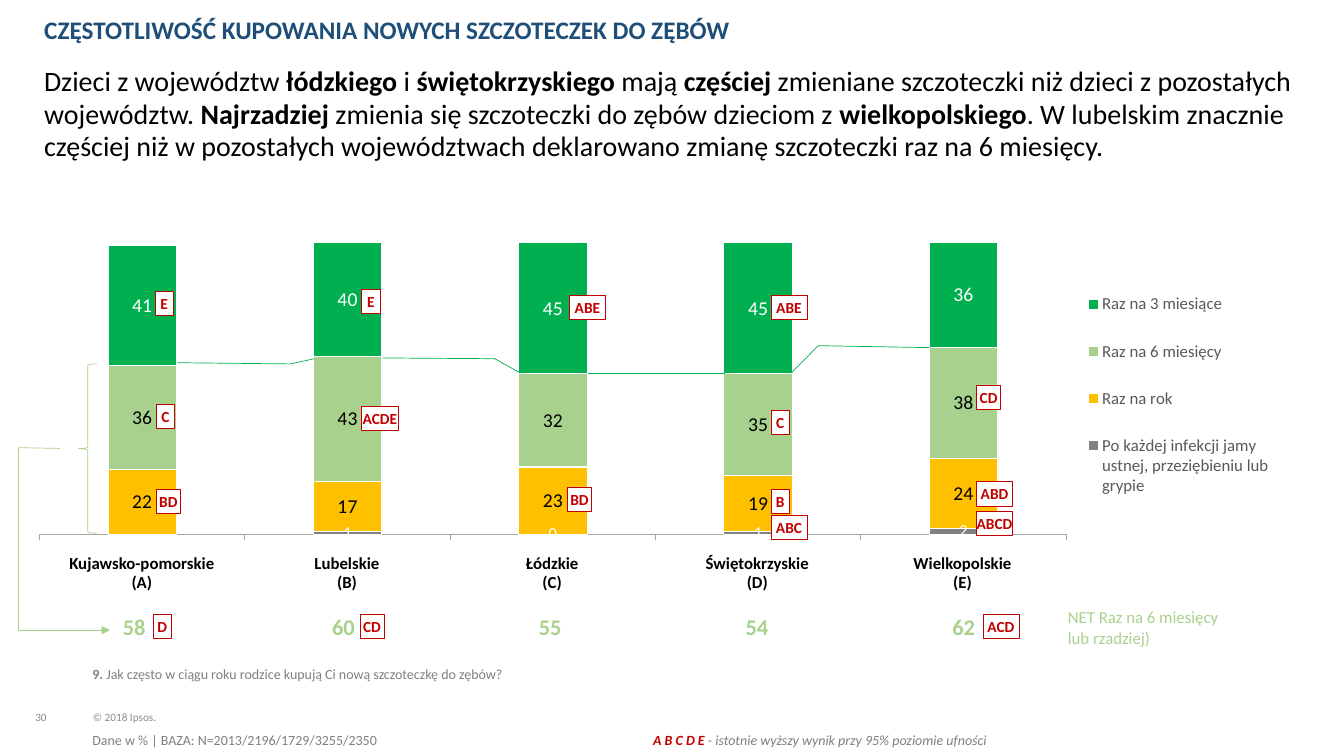
from pptx import Presentation
from pptx import util as u
from pptx.chart import data
from pptx.dml import color as dml
from pptx.enum import chart as ch, shapes, text
from pptx.oxml import parse_xml

NS = 'xmlns:c="http://schemas.openxmlformats.org/drawingml/2006/chart"'
NA = 'xmlns:a="http://schemas.openxmlformats.org/drawingml/2006/main"'
RED, LIGHT, GREEN, GREY = "C00000", "A9D18E", "00B050", "808080"
Cm, Pt = u.Cm, u.Pt


def rgb(code):
    return dml.RGBColor.from_string(code)


def write(para, words, size=10, color="000000", bold=False, italic=False):
    run = para.add_run()
    run.text = words
    font = run.font
    font.name, font.size = "Calibri", Pt(size)
    font.bold, font.italic = bold, italic
    font.color.rgb = rgb(color)


deck = Presentation()
deck.slide_width, deck.slide_height = Cm(33.87), Cm(19.05)
slide = deck.slides.add_slide(deck.slide_layouts[5])
items = slide.shapes

title = items.title
title.left, title.top, title.width, title.height = Cm(0.86), Cm(0.33), Cm(24.84), Cm(0.81)
frame = title.text_frame
frame.auto_size = text.MSO_AUTO_SIZE.NONE
frame.vertical_anchor = text.MSO_ANCHOR.TOP
para = frame.paragraphs[0]
para.alignment, para.line_spacing = text.PP_ALIGN.LEFT, 0.9
write(para, "CZĘSTOTLIWOŚĆ KUPOWANIA NOWYCH SZCZOTECZEK DO ZĘBÓW", size=18, color="1F4E79", bold=True)

series = [
    ("Po każdej infekcji jamy ustnej, przeziębieniu lub grypie", (0, 1, 0, 1, 2), GREY, "FFFFFF", 12),
    ("Raz na rok", (22, 17, 23, 19, 24), "FFC000", "000000", 14),
    ("Raz na 6 miesięcy", (36, 43, 32, 35, 38), LIGHT, "000000", 14),
    ("Raz na 3 miesiące", (41, 40, 45, 45, 36), GREEN, "FFFFFF", 14),
]
facts = data.CategoryChartData(number_format="0")
facts.categories = ["1", "2", "3", "4", "5"]
for name, nums, *_ in series:
    facts.add_series(name, nums)
chart = items.add_chart(ch.XL_CHART_TYPE.COLUMN_STACKED, Cm(0.46), Cm(5.64),
                        Cm(31.78), Cm(9.91), facts).chart
chart.has_title = False
chart.font.name, chart.font.size = "Calibri", Pt(10)
plot = chart.plots[0]
plot.gap_width, plot.overlap, plot.vary_by_categories = 200, 100, False
for bar, (name, nums, fill, ink, size) in zip(plot.series, series):
    bar.format.fill.solid()
    bar.format.fill.fore_color.rgb = rgb(fill)
    bar.format.line.color.rgb = rgb("FFFFFF")
    bar.format.line.width = Pt(0.75)
    tags = bar.data_labels
    tags.show_value = True
    tags.position = ch.XL_LABEL_POSITION.CENTER
    tags.number_format, tags.number_format_is_linked = "0", False
    tags.font.name, tags.font.size = "Calibri", Pt(size)
    tags.font.color.rgb = rgb(ink)
plot.series[0].data_labels._element.insert(0, parse_xml(
    f'<c:dLbl {NS}><c:idx val="0"/><c:delete val="1"/></c:dLbl>'))

value = chart.value_axis
value.minimum_scale, value.maximum_scale = 0, 100
value.has_major_gridlines = False
value.visible = False
base = chart.category_axis
base.tick_label_position = ch.XL_TICK_LABEL_POSITION.NONE
base.major_tick_mark = ch.XL_TICK_MARK.OUTSIDE
base.format.line.color.rgb = rgb("A6A6A6")
base.format.line.width = Pt(0.75)

chart.has_legend = True
key = chart.legend
key.position = ch.XL_LEGEND_POSITION.RIGHT
key.include_in_layout = False
key.font.name, key.font.size = "Calibri", Pt(12)
key.font.color.rgb = rgb("595959")
area = chart._chartSpace.chart.plotArea
for node, spot, inner, frac in [
    (area, 0, '<c:layoutTarget val="inner"/>', (0.017, 0.048, 0.814, 0.741)),
    (key._element, 1, "", (0.84, 0.11, 0.16, 0.65)),
]:
    for old in node.findall("{*}layout"):
        node.remove(old)
    modes = '<c:xMode val="edge"/><c:yMode val="edge"/>'
    sizes = "".join(f'<c:{n} val="{v}"/>' for n, v in zip("xywh", frac))
    node.insert(spot, parse_xml(
        f"<c:layout {NS}><c:manualLayout>{inner}{modes}{sizes}</c:manualLayout></c:layout>"))

lead = ("Dzieci z województw *łódzkiego* i *świętokrzyskiego* mają *częściej* zmieniane szczoteczki "
        "niż dzieci z pozostałych województw. *Najrzadziej* zmienia się szczoteczki do zębów dzieciom "
        "z *wielkopolskiego*. W lubelskim znacznie częściej niż w pozostałych województwach "
        "deklarowano zmianę szczoteczki raz na 6 miesięcy.")
small = dict(size=8, color="888B8D")
top, low = text.MSO_ANCHOR.TOP, text.MSO_ANCHOR.BOTTOM
boxes = [
    (0.89, 17.35, 1.14, 0.89, False, low, 0.85, [("30", small)]),
    (2.34, 17.6, 2.57, 0.64, False, low, 0.85, [("© 2018 Ipsos.", small)]),
    (2.08, 16.64, 29.82, 0.69, True, top, 1.0, [
        ("9. ", dict(color=GREY, bold=True)),
        ("Jak często w ciągu roku rodzice kupują Ci nową szczoteczkę do zębów?", dict(color=GREY))]),
    (2.08, 18.31, 10.39, 0.69, True, top, 1.0, [
        ("Dane w % | BAZA: N=2013/2196/1729/3255/2350", dict(color="7F7F7F"))]),
    (0.86, 1.52, 32.05, 3.38, True, top, Pt(23), [
        (part, dict(size=20, bold=i % 2 == 1)) for i, part in enumerate(lead.split("*"))]),
    (16.38, 18.52, 11, 0.36, False, top, 0.8, [
        (" A B C D E ", dict(color=RED, bold=True, italic=True)),
        ("- ", dict(color=GREY, italic=True)),
        ("istotnie wyższy wynik przy 95% poziomie ufności", dict(color="7F7F7F", italic=True))]),
]
for x, y, wide, high, inset, anchor, gap, runs in boxes:
    frame = items.add_textbox(Cm(x), Cm(y), Cm(wide), Cm(high)).text_frame
    frame.word_wrap = inset
    frame.vertical_anchor = anchor
    if not inset:
        frame.margin_left = frame.margin_right = frame.margin_top = frame.margin_bottom = 0
    para = frame.paragraphs[0]
    para.line_spacing = gap
    for words, style in runs:
        write(para, words, **style)

places = ["Kujawsko-pomorskie", "Lubelskie", "Łódzkie", "Świętokrzyskie", "Wielkopolskie"]
heads = [[place, f"({mark})"] for place, mark in zip(places, "ABCDE")]
nets = [["58 "], ["60"], ["55"], ["54"], ["62"], ["NET Raz na 6 miesięcy lub rzadziej)"]]
bold = dict(size=16, color=LIGHT, bold=True)
for x, y, widths, cells, style, gap in [
    (0.99, 13.94, [5.17] * 5, heads, dict(size=12, bold=True), Pt(14)),
    (0.84, 15.29, [5.21] * 5 + [4.39], nets, bold, 1.0),
]:
    grid = items.add_table(1, len(cells), Cm(x), Cm(y), Cm(sum(widths)), Cm(1.04)).table
    grid.first_row = grid.horz_banding = False
    for i, (wide, lines) in enumerate(zip(widths, cells)):
        grid.columns[i].width = Cm(wide)
        cell = grid.cell(0, i)
        cell.fill.background()
        cell.margin_left = cell.margin_right = cell.margin_top = cell.margin_bottom = Cm(0.02)
        cell.vertical_anchor = text.MSO_ANCHOR.MIDDLE
        note = i == 5
        for j, words in enumerate(lines):
            para = cell.text_frame.add_paragraph() if j else cell.text_frame.paragraphs[0]
            para.alignment = text.PP_ALIGN.LEFT if note else text.PP_ALIGN.CENTER
            para.line_spacing = gap
            write(para, words, **(dict(size=12, color=LIGHT) if note else style))

trails = [
    (GREEN, [(4.47, 9.14), (7.32, 9.17), (7.92, 9.04)]),
    (GREEN, [(9.65, 9.02), (12.47, 9.04), (13.11, 9.4)]),
    (GREEN, [(14.81, 9.4), (18.26, 9.4)]),
    (GREEN, [(19.94, 9.4), (20.62, 8.71), (23.44, 8.76)]),
    (LIGHT, [(1.5, 11.3), (0.46, 11.28), (0.46, 15.88), (2.77, 15.88)]),
]
for tint, dots in trails:
    for (x, y), (right, down) in zip(dots, dots[1:]):
        line = items.add_connector(shapes.MSO_CONNECTOR.STRAIGHT, Cm(x), Cm(y), Cm(right), Cm(down))
        line.line.color.rgb, line.line.width = rgb(tint), Pt(0.5)
        line._element.spPr.append(parse_xml(f"<a:effectLst {NA}/>"))
line.line._get_or_add_ln().append(parse_xml(f'<a:tailEnd {NA} type="triangle"/>'))

brace = items.add_shape(shapes.MSO_SHAPE.LEFT_BRACE, Cm(1.98), Cm(9.17), Cm(0.46), Cm(4.27))
brace.shadow.inherit = False
brace.fill.background()
brace.line.color.rgb, brace.line.width = rgb(LIGHT), Pt(0.5)

marks = [
    ("ABE", 14.35, 7.44), ("ABE", 19.43, 7.44), ("E", 3.91, 7.34), ("E", 9.12, 7.29),
    ("C", 3.94, 10.19), ("C", 19.43, 10.34), ("ACDE", 9.12, 10.24), ("CD", 24.61, 9.7),
    ("BD", 3.94, 12.34), ("BD", 14.3, 12.27), ("ABD", 24.61, 12.14), ("B", 19.43, 12.34),
    ("ABC", 19.43, 12.98), ("ABCD", 24.61, 12.88), ("ACD", 24.77, 15.49),
    ("CD", 9.07, 15.49), ("D", 3.86, 15.47),
]
spans = {1: 0.46, 2: 0.61, 3: 0.91, 4: 0.91}
for words, x, y in marks:
    flag = items.add_shape(shapes.MSO_SHAPE.RECTANGLE, Cm(x), Cm(y), Cm(spans[len(words)]), Cm(0.61))
    flag.shadow.inherit = False
    flag.fill.solid()
    flag.fill.fore_color.rgb = rgb("FFFFFF")
    flag.line.color.rgb, flag.line.width = rgb(RED), Pt(0.5)
    frame = flag.text_frame
    frame.margin_left = frame.margin_right = frame.margin_top = frame.margin_bottom = 0
    frame.word_wrap = False
    frame.vertical_anchor = text.MSO_ANCHOR.MIDDLE
    frame.paragraphs[0].alignment = text.PP_ALIGN.CENTER
    write(frame.paragraphs[0], words, size=11, color=RED, bold=True)

deck.save("out.pptx")
